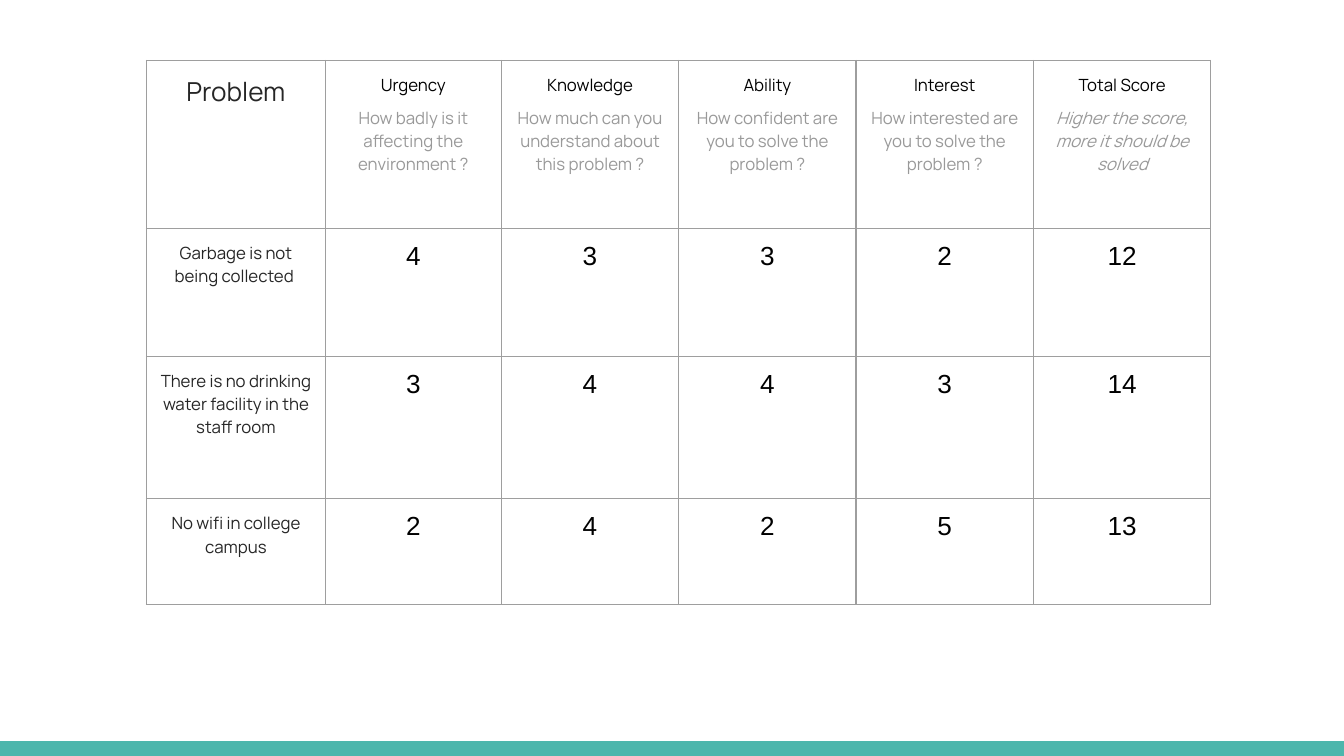
from dataclasses import dataclass

from lxml import etree
from pptx import Presentation
from pptx.dml.color import RGBColor
from pptx.enum.shapes import MSO_SHAPE
from pptx.enum.text import PP_ALIGN
from pptx.oxml.ns import qn
from pptx.util import Inches, Pt

RECTANGLE = MSO_SHAPE.RECTANGLE
CENTER = PP_ALIGN.CENTER

SLIDE_WIDTH = Inches(10)
SLIDE_HEIGHT = Inches(10 * 9 / 16)
BAR_HEIGHT = Inches(0.11)

TEAL, GRID, INK, BLACK, GREY = "4DB6AC", "9E9E9E", "262626", "000000", "999999"
BODY_FONT, SCORE_FONT = "Manrope", "Arial"
COLUMN_WIDTHS = [1.33, 1.31, 1.32, 1.32, 1.32, 1.32]
ROW_HEIGHTS = [1.25, 0.95, 1.06, 0.79]
CELL_FORMAT = {f"margin_{side}": Inches(0.1) for side in ("left", "right", "top", "bottom")}
TABLE_FORMAT = {"first_row": False, "horz_banding": False}


@dataclass
class Line:
    text: str
    size: float = 9
    font: str = BODY_FONT
    color: str = INK
    italic: bool = False
    before: float = 0
    after: float = 0


@dataclass
class Criterion:
    title: str
    question: str
    italic: bool = False
    after: float = 0


@dataclass
class Problem:
    name: str
    scores: list[int]


CRITERIA = [
    Criterion("Urgency", "How badly is it affecting the environment ?", after=5),
    Criterion("Knowledge", "How much can you understand about this problem ?"),
    Criterion("Ability", "How confident are you to solve the problem ?", after=5),
    Criterion("Interest", "How interested are you to solve the problem ?"),
    Criterion("Total Score", "Higher the score, more it should be solved", italic=True),
]
PROBLEMS = [
    Problem("Garbage is not being collected ", [4, 3, 3, 2]),
    Problem("There is no drinking water facility in the staff room", [3, 4, 4, 3]),
    Problem("No wifi in college campus", [2, 4, 2, 5]),
]


def rgb(color: str) -> RGBColor:
    return RGBColor.from_string(color)


def apply_format(target, values: dict) -> None:
    for name, value in values.items():
        setattr(target, name, value)


def draw_borders(cell) -> None:
    properties = cell._tc.get_or_add_tcPr()
    for edge in ("a:lnL", "a:lnR", "a:lnT", "a:lnB"):
        border = etree.SubElement(properties, qn(edge), w=str(Pt(0.75)))
        fill = etree.SubElement(border, qn("a:solidFill"))
        etree.SubElement(fill, qn("a:srgbClr"), val=GRID)


def write_cell(cell, lines: list[Line]) -> None:
    apply_format(cell, CELL_FORMAT)
    draw_borders(cell)
    cell.fill.background()
    frame = cell.text_frame
    for index, line in enumerate(lines):
        paragraph = frame.add_paragraph() if index else frame.paragraphs[0]
        apply_format(paragraph, {
            "alignment": CENTER,
            "space_before": Pt(line.before),
            "space_after": Pt(line.after),
        })
        run = paragraph.add_run()
        run.text = line.text
        apply_format(run.font, {
            "name": line.font,
            "size": Pt(line.size),
            "bold": False,
            "italic": line.italic,
        })
        run.font.color.rgb = rgb(line.color)


def header_cells() -> list[list[Line]]:
    return [[Line("Problem", size=14)]] + [
        [
            Line(item.title, color=BLACK),
            Line(item.question, color=GREY, italic=item.italic, before=5, after=item.after),
        ]
        for item in CRITERIA
    ]


def problem_cells(problem: Problem) -> list[list[Line]]:
    """Name, scores and their total, one cell each."""
    values = [*problem.scores, sum(problem.scores)]
    return [[Line(problem.name)]] + [
        [Line(str(value), size=14, font=SCORE_FONT, color=BLACK)] for value in values
    ]


def add_footer_bar(slide) -> None:
    bar = slide.shapes.add_shape(
        RECTANGLE, 0, SLIDE_HEIGHT - BAR_HEIGHT, SLIDE_WIDTH, BAR_HEIGHT
    )
    bar.shadow.inherit = False
    bar.fill.solid()
    bar.fill.fore_color.rgb = rgb(TEAL)
    bar.line.fill.background()


def add_score_table(slide) -> None:
    rows = [header_cells(), *map(problem_cells, PROBLEMS)]
    table = slide.shapes.add_table(
        len(rows), len(COLUMN_WIDTHS), Inches(1.09), Inches(0.45),
        Inches(sum(COLUMN_WIDTHS)), Inches(sum(ROW_HEIGHTS)),
    ).table
    apply_format(table, TABLE_FORMAT)
    for column, width in zip(table.columns, COLUMN_WIDTHS):
        column.width = Inches(width)
    for row, height, contents in zip(table.rows, ROW_HEIGHTS, rows):
        row.height = Inches(height)
        for cell, lines in zip(row.cells, contents):
            write_cell(cell, lines)


def main() -> None:
    presentation = Presentation()
    presentation.slide_width = SLIDE_WIDTH
    presentation.slide_height = SLIDE_HEIGHT
    slide = presentation.slides.add_slide(presentation.slide_layouts[6])
    add_footer_bar(slide)
    add_score_table(slide)
    presentation.save("out.pptx")


if __name__ == "__main__":
    main()
